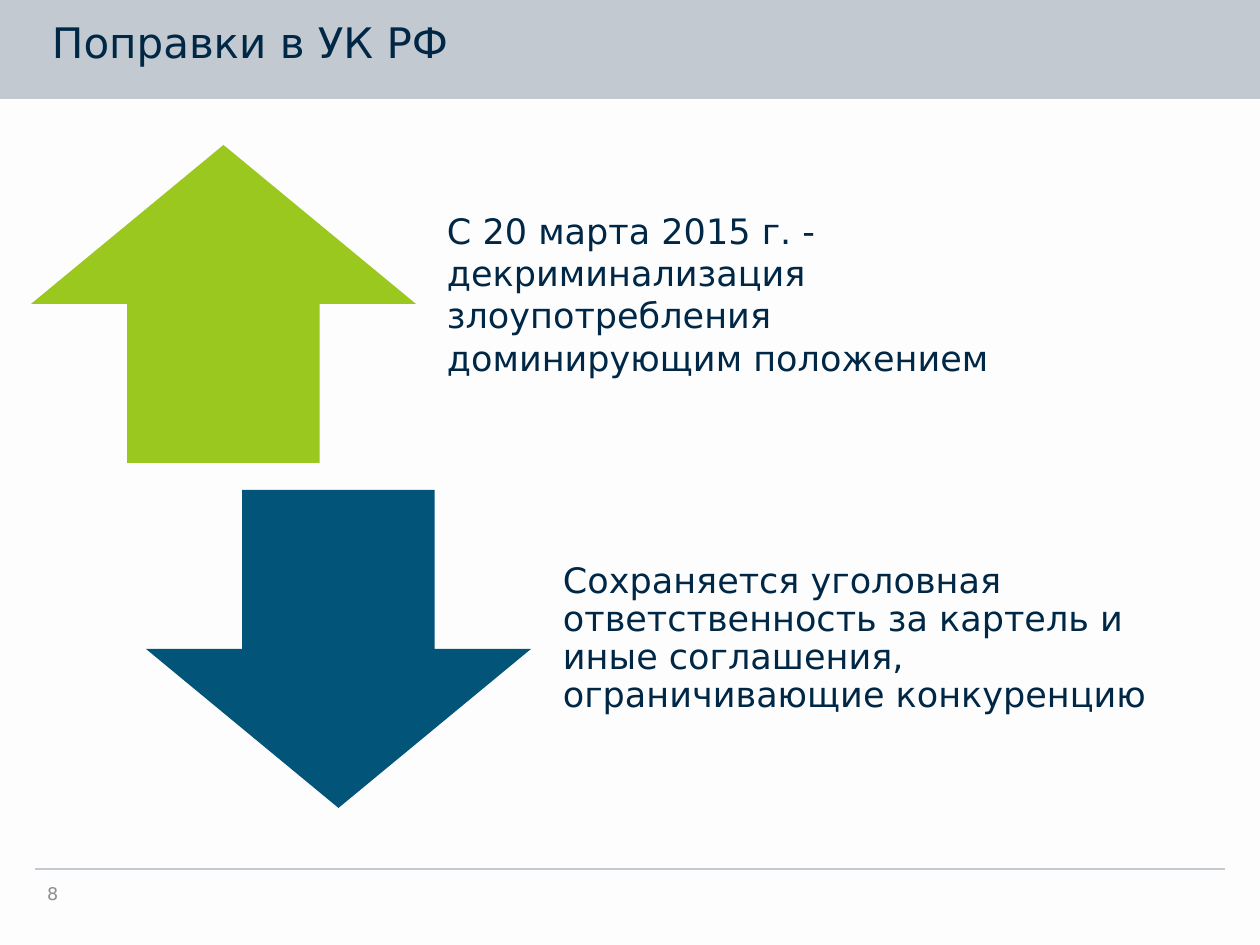
from lxml import etree
from pptx import Presentation
from pptx.dml.color import RGBColor
from pptx.enum.shapes import MSO_CONNECTOR, MSO_SHAPE
from pptx.enum.text import MSO_ANCHOR
from pptx.oxml.ns import qn
from pptx.util import Emu, Pt

RECTANGLE = MSO_SHAPE.RECTANGLE
UP_ARROW = MSO_SHAPE.UP_ARROW
DOWN_ARROW = MSO_SHAPE.DOWN_ARROW
STRAIGHT = MSO_CONNECTOR.STRAIGHT
MIDDLE = MSO_ANCHOR.MIDDLE

EMU_PER_PX = 914400 / 126
FONT = "DejaVu Sans"
COLORS = {
    "background": "FDFDFD",
    "band": "C2C9D0",
    "text": "002846",
    "number": "8C8E94",
    "up": "9BC81E",
    "down": "025579",
}


def px(*lengths):
    return [Emu(round(length * EMU_PER_PX)) for length in lengths]


def add_text(box, text, size, color, insets, line_spacing=1.0):
    """Add a one-run text box; box is left, top, width, height and insets are left, top, right, bottom."""
    frame = slide.shapes.add_textbox(*px(*box)).text_frame
    frame.word_wrap = True
    frame.vertical_anchor = MIDDLE
    (frame.margin_left, frame.margin_top,
     frame.margin_right, frame.margin_bottom) = px(*insets)
    paragraph = frame.paragraphs[0]
    paragraph.line_spacing = line_spacing
    run = paragraph.add_run()
    run.text = text
    run.font.name = FONT
    run.font.size = Pt(size)
    run.font.color.rgb = RGBColor.from_string(COLORS[color])


prs = Presentation()
prs.slide_width, prs.slide_height = px(1260, 945)
slide = prs.slides.add_slide(prs.slide_layouts[6])
background = slide.background.fill
background.solid()
background.fore_color.rgb = RGBColor.from_string(COLORS["background"])

# Header band, footer rule, title and page number
ARROW_W, ARROW_H = 385, 318
filled_shapes = [
    (RECTANGLE, (0, 0, 1260, 99), "band"),
    (UP_ARROW, (31, 145, ARROW_W, ARROW_H), "up"),
    (DOWN_ARROW, (146, 490, ARROW_W, ARROW_H), "down"),
]
for preset, box, color in filled_shapes:
    shape = slide.shapes.add_shape(preset, *px(*box))
    shape.shadow.inherit = False
    shape.fill.solid()
    shape.fill.fore_color.rgb = RGBColor.from_string(COLORS[color])
    shape.line.fill.background()

footer_rule = slide.shapes.add_connector(STRAIGHT, *px(35, 869, 1225, 869))
footer_rule.line.width = Pt(1.5)
footer_rule.line.color.rgb = RGBColor.from_string(COLORS["band"])
etree.SubElement(footer_rule._element.spPr, qn("a:effectLst"))

add_text((-2, -4, 1262, 103), "Поправки в УК РФ", 24, "text", (54, 5, 5, 9), 0.85)
add_text((35, 877, 159, 33), "8", 10, "number", (12, 6, 12, 6))

# Text beside each arrow
amendments = [
    (427, 145, 1.0, "С 20 марта 2015 г. - декриминализация злоупотребления "
                    "доминирующим положением"),
    (543, 490, 0.9, "Сохраняется уголовная ответственность за картель и иные "
                    "соглашения, ограничивающие конкуренцию"),
]
for left, top, line_spacing, text in amendments:
    add_text((left, top, 654, ARROW_H), text, 20, "text", (20, 0, 20, 20), line_spacing)

prs.save("out.pptx")
